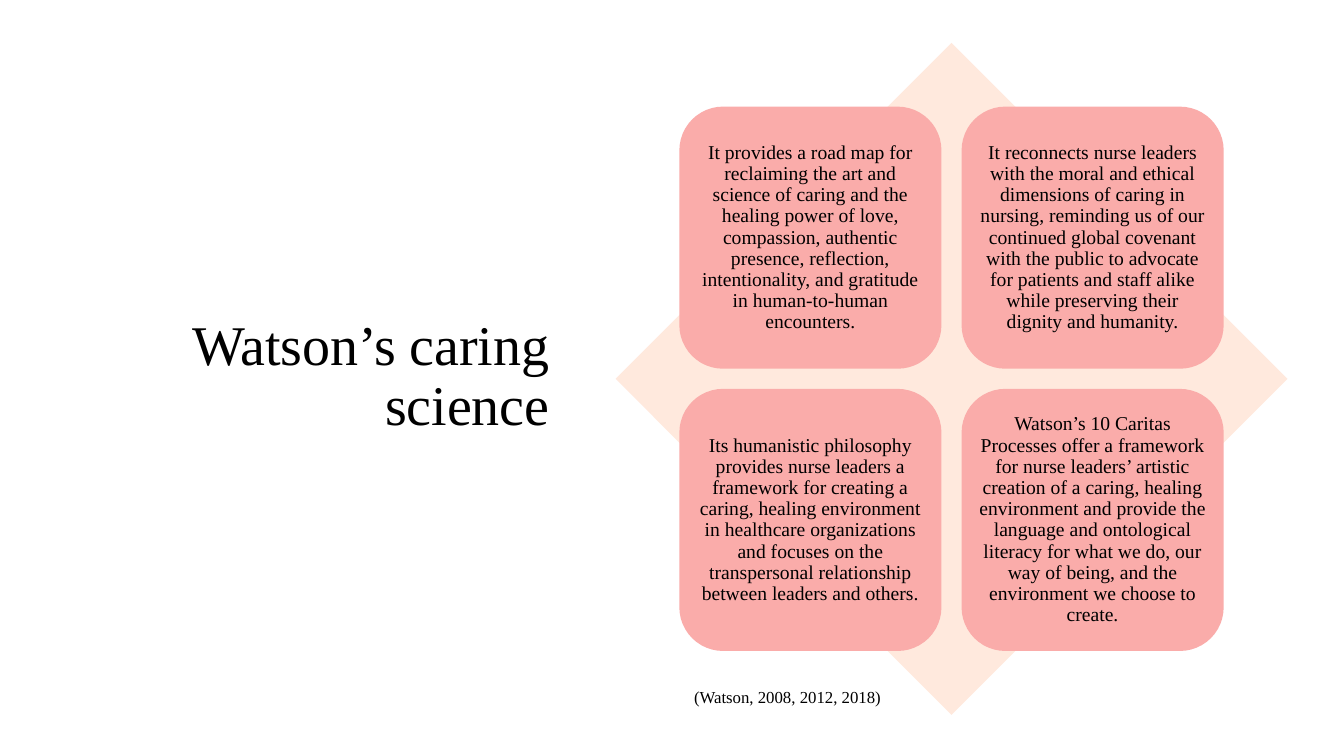
from dataclasses import dataclass

from pptx import Presentation
from pptx.dml.color import RGBColor
from pptx.enum.shapes import MSO_SHAPE
from pptx.enum.text import MSO_ANCHOR, PP_ALIGN
from pptx.shapes.autoshape import Shape
from pptx.slide import Slide
from pptx.util import Pt


@dataclass(frozen=True)
class Theme:
    font: str = "Times New Roman"
    ink: RGBColor = RGBColor(0x00, 0x00, 0x00)
    diamond: RGBColor = RGBColor(0xFF, 0xE9, 0xDD)
    card: RGBColor = RGBColor(0xFA, 0xAC, 0xAA)
    title_size: float = 40
    card_size: float = 14
    citation_size: float = 12


@dataclass(frozen=True)
class Box:
    left: float
    top: float
    width: float
    height: float


@dataclass(frozen=True)
class Principle:
    column: int
    row: int
    text: str


THEME = Theme()
DIAMOND = Box(439.7, 30.6, 480, 480)
CARD_SIDE = 187.2
CARD_GAP = 14.4
CARD_SIDE_INSET = 3.5
CARD_END_INSET = 4.5

PRINCIPLES = [
    Principle(0, 0, "It provides a road map for reclaiming the art and science of caring "
                    "and the healing power of love, compassion, authentic presence, "
                    "reflection, intentionality, and gratitude in human-to-human encounters."),
    Principle(1, 0, "It reconnects nurse leaders with the moral and ethical dimensions of "
                    "caring in nursing, reminding us of our continued global covenant with "
                    "the public to advocate for patients and staff alike while preserving "
                    "their dignity and humanity."),
    Principle(0, 1, "Its humanistic philosophy provides nurse leaders a framework for "
                    "creating a caring, healing environment in healthcare organizations "
                    "and focuses on the transpersonal relationship between leaders and others."),
    Principle(1, 1, "Watson’s 10 Caritas Processes offer a framework for nurse leaders’ "
                    "artistic creation of a caring, healing environment and provide the "
                    "language and ontological literacy for what we do, our way of being, "
                    "and the environment we choose to create."),
]


def add_filled(slide: Slide, kind: MSO_SHAPE, box: Box, color: RGBColor) -> Shape:
    shape = slide.shapes.add_shape(
        kind, Pt(box.left), Pt(box.top), Pt(box.width), Pt(box.height))
    shape.shadow.inherit = False
    shape.fill.solid()
    shape.fill.fore_color.rgb = color
    shape.line.fill.background()
    return shape


def add_label(slide: Slide, box: Box) -> Shape:
    return slide.shapes.add_textbox(
        Pt(box.left), Pt(box.top), Pt(box.width), Pt(box.height))


def write(shape: Shape, text: str, size: float, align: PP_ALIGN,
          anchor: MSO_ANCHOR, spacing: float, after: float = 0) -> None:
    frame = shape.text_frame
    frame.word_wrap = True
    frame.vertical_anchor = anchor
    paragraph = frame.paragraphs[0]
    paragraph.alignment = align
    paragraph.line_spacing = spacing
    paragraph.space_after = Pt(after)
    run = paragraph.add_run()
    run.text = text
    run.font.name = THEME.font
    run.font.size = Pt(size)
    run.font.color.rgb = THEME.ink


def add_principle(slide: Slide, principle: Principle) -> None:
    pitch = CARD_SIDE + CARD_GAP
    margin = (DIAMOND.width - CARD_SIDE - pitch) / 2
    box = Box(DIAMOND.left + margin + principle.column * pitch,
              DIAMOND.top + margin + principle.row * pitch,
              CARD_SIDE, CARD_SIDE)
    card = add_filled(slide, MSO_SHAPE.ROUNDED_RECTANGLE, box, THEME.card)
    frame = card.text_frame
    frame.margin_left = frame.margin_right = Pt(CARD_SIDE_INSET)
    frame.margin_top = frame.margin_bottom = Pt(CARD_END_INSET)
    write(card, principle.text, THEME.card_size, PP_ALIGN.CENTER,
          MSO_ANCHOR.MIDDLE, 0.9, 5)


def main() -> None:
    deck = Presentation()
    deck.slide_width, deck.slide_height = Pt(960), Pt(540)
    slide = deck.slides.add_slide(deck.slide_layouts[6])

    title = add_label(slide, Box(10.2, 119.5, 389.5, 300))
    write(title, "Watson’s caring science", THEME.title_size,
          PP_ALIGN.RIGHT, MSO_ANCHOR.MIDDLE, 0.9)

    add_filled(slide, MSO_SHAPE.DIAMOND, DIAMOND, THEME.diamond)
    for principle in PRINCIPLES:
        add_principle(slide, principle)

    citation = add_label(slide, Box(381.2, 487, 261.4, 44))
    citation.text_frame.margin_right = Pt(13.2)
    write(citation, "(Watson, 2008, 2012, 2018)", THEME.citation_size,
          PP_ALIGN.RIGHT, MSO_ANCHOR.TOP, 1.0)

    deck.save("out.pptx")


if __name__ == "__main__":
    main()
